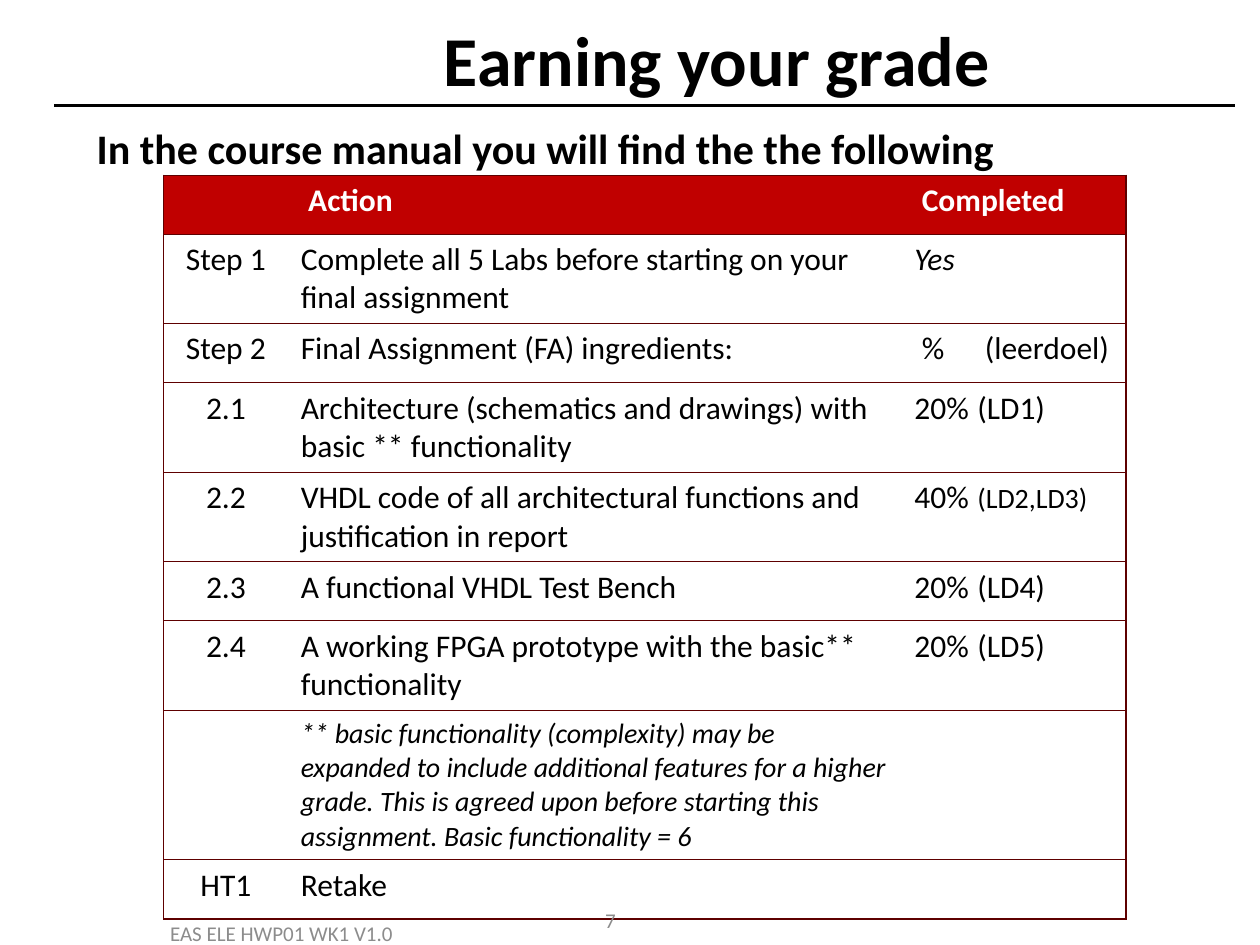
"""Builds the course slide on how the grade is earned."""
from lxml.etree import SubElement
from pptx import Presentation
from pptx.dml.color import RGBColor
from pptx.enum.shapes import MSO_CONNECTOR as Connector
from pptx.enum.text import MSO_ANCHOR as Anchor, MSO_AUTO_SIZE as AutoSize, PP_ALIGN as Align
from pptx.oxml.ns import qn
from pptx.util import Cm, Pt

BLACK = RGBColor(0x00, 0x00, 0x00)
WHITE = RGBColor(0xFF, 0xFF, 0xFF)
GREY = RGBColor(0x8C, 0x8C, 0x8C)
RED = RGBColor(0xC0, 0x00, 0x00)
MAROON = RGBColor(0x5E, 0x00, 0x00)

ONE_LINE, TWO_LINES, FOUR_LINES = 1.19, 1.75, 2.95
COLUMN_WIDTHS = [2.51, 12.37, 4.52]
TAB = 1.52
NOTE = ("** basic functionality (complexity) may be expanded to include additional "
        "features for a higher grade. This is agreed upon before starting this "
        "assignment. Basic functionality = 6")

GRADING = [
    (ONE_LINE, "", [("Action", {})], [("Completed", {})]),
    (TWO_LINES, "Step 1",
     [("Complete all 5 Labs before starting on your final assignment", {})],
     [("Yes", {"italic": True})]),
    (ONE_LINE, "Step 2", [("Final Assignment (FA) ingredients:", {})],
     [("%\t(leerdoel)", {})]),
    (TWO_LINES, "2.1",
     [("Architecture (schematics and drawings) with basic ** functionality", {})],
     [("20%\t(LD1)", {})]),
    (TWO_LINES, "2.2",
     [("VHDL code of all architectural functions and justification in report", {})],
     [("40%\t", {}), ("(LD2,LD3)", {"size": 16})]),
    (ONE_LINE, "2.3", [("A functional VHDL Test Bench", {})], [("20%\t(LD4)", {})]),
    (TWO_LINES, "2.4",
     [("A working FPGA prototype with the basic** functionality", {})],
     [("20%\t(LD5)", {})]),
    (FOUR_LINES, "", [(NOTE, {"size": 16, "italic": True})], []),
    (ONE_LINE, "HT1", [("Retake", {})], []),
]
INDENTS = {(0, 1): 0.15, (0, 2): 0.15, (2, 2): 0.15}
TABS = {(2, 2): 1.17}


class SlideBuilder:
    """Holds the style and the current slide."""

    def __init__(self, slide, font="Calibri"):
        self.slide = slide
        self.font = font

    def run(self, paragraph, text, size=18, color=BLACK, bold=False, italic=False):
        run = paragraph.add_run()
        run.text = text
        font = run.font
        font.name, font.size, font.bold, font.italic = self.font, Pt(size), bold, italic
        font.color.rgb = color

    def title(self, text, box):
        title = self.slide.shapes.title
        title.left, title.top, title.width, title.height = map(Cm, box)
        frame = title.text_frame
        frame.vertical_anchor = Anchor.MIDDLE
        frame.paragraphs[0].alignment = Align.CENTER
        self.run(frame.paragraphs[0], text, 40, bold=True)

    def rule(self, x1, x2, y):
        rule = self.slide.shapes.add_connector(
            Connector.STRAIGHT, Cm(x1), Cm(y), Cm(x2), Cm(y))
        rule.line.color.rgb = BLACK
        rule.line.width = Pt(2)
        SubElement(rule._element.spPr, qn("a:effectLst"))

    def text(self, text, box, **style):
        frame = self.slide.shapes.add_textbox(*map(Cm, box)).text_frame
        self.run(frame.paragraphs[0], text, **style)
        return frame

    def footer(self, text, box):
        frame = self.text(text, box, size=12, color=GREY)
        frame.word_wrap = True
        frame.vertical_anchor = Anchor.MIDDLE
        frame.paragraphs[0].alignment = Align.CENTER

    def borders(self, cell, sides):
        properties = cell._tc.get_or_add_tcPr()
        for side in "LRTB":
            line = SubElement(properties, qn(f"a:ln{side}"), w=str(Pt(0.75)))
            if side in sides:
                fill = SubElement(line, qn("a:solidFill"))
                SubElement(fill, qn("a:srgbClr"), val=str(MAROON))
            else:
                SubElement(line, qn("a:noFill"))

    def indent(self, paragraph, left, tab):
        properties = paragraph._p.get_or_add_pPr()
        properties.set("marL", str(Cm(left)))
        properties.set("indent", "0")
        stops = SubElement(properties, qn("a:tabLst"))
        SubElement(stops, qn("a:tab"), pos=str(Cm(tab)), algn="l")

    def table(self, rows, left, top):
        heights = [row[0] for row in rows]
        table = self.slide.shapes.add_table(
            len(rows), len(COLUMN_WIDTHS), Cm(left), Cm(top),
            Cm(sum(COLUMN_WIDTHS)), Cm(sum(heights))).table
        table.first_row = table.horz_banding = False
        for column, width in zip(table.columns, COLUMN_WIDTHS):
            column.width = Cm(width)
        for r, (height, step, action, completed) in enumerate(rows):
            table.rows[r].height = Cm(height)
            contents = [[(step, {})] if step else [], action, completed]
            for c, runs in enumerate(contents):
                cell = table.cell(r, c)
                self.borders(cell, "TB" + {0: "L", 2: "R"}.get(c, ""))
                if r == 0:
                    cell.fill.solid()
                    cell.fill.fore_color.rgb = RED
                else:
                    cell.fill.background()
                paragraph = cell.text_frame.paragraphs[0]
                if c == 0:
                    paragraph.alignment = Align.CENTER
                elif c == 2 or (r, c) in INDENTS:
                    self.indent(paragraph, INDENTS.get((r, c), 0), TABS.get((r, c), TAB))
                header = {"color": WHITE, "bold": True} if r == 0 else {}
                for text, style in runs:
                    self.run(paragraph, text, **header, **style)


def main():
    deck = Presentation()
    deck.slide_width, deck.slide_height = Cm(25.4), Cm(19.05)
    builder = SlideBuilder(deck.slides.add_slide(deck.slide_layouts[5]))
    builder.rule(1.09, 24.89, 2.13)
    builder.title("Earning your grade", (3.5, 0, 21.9, 2.34))
    builder.table(GRADING, 3.3, 3.53)
    builder.footer("7", (9.7, 18.03, 5.21, 1.02))
    builder.footer("EAS ELE HWP01 WK1 V1.0", (1.65, 18.31, 8.05, 1.02))
    intro = builder.text("In the course manual you will find the the following",
                         (1.7, 2.34, 19.15, 1.27), size=24, bold=True)
    intro.word_wrap = False
    intro.auto_size = AutoSize.SHAPE_TO_FIT_TEXT
    deck.save("out.pptx")


if __name__ == "__main__":
    main()
